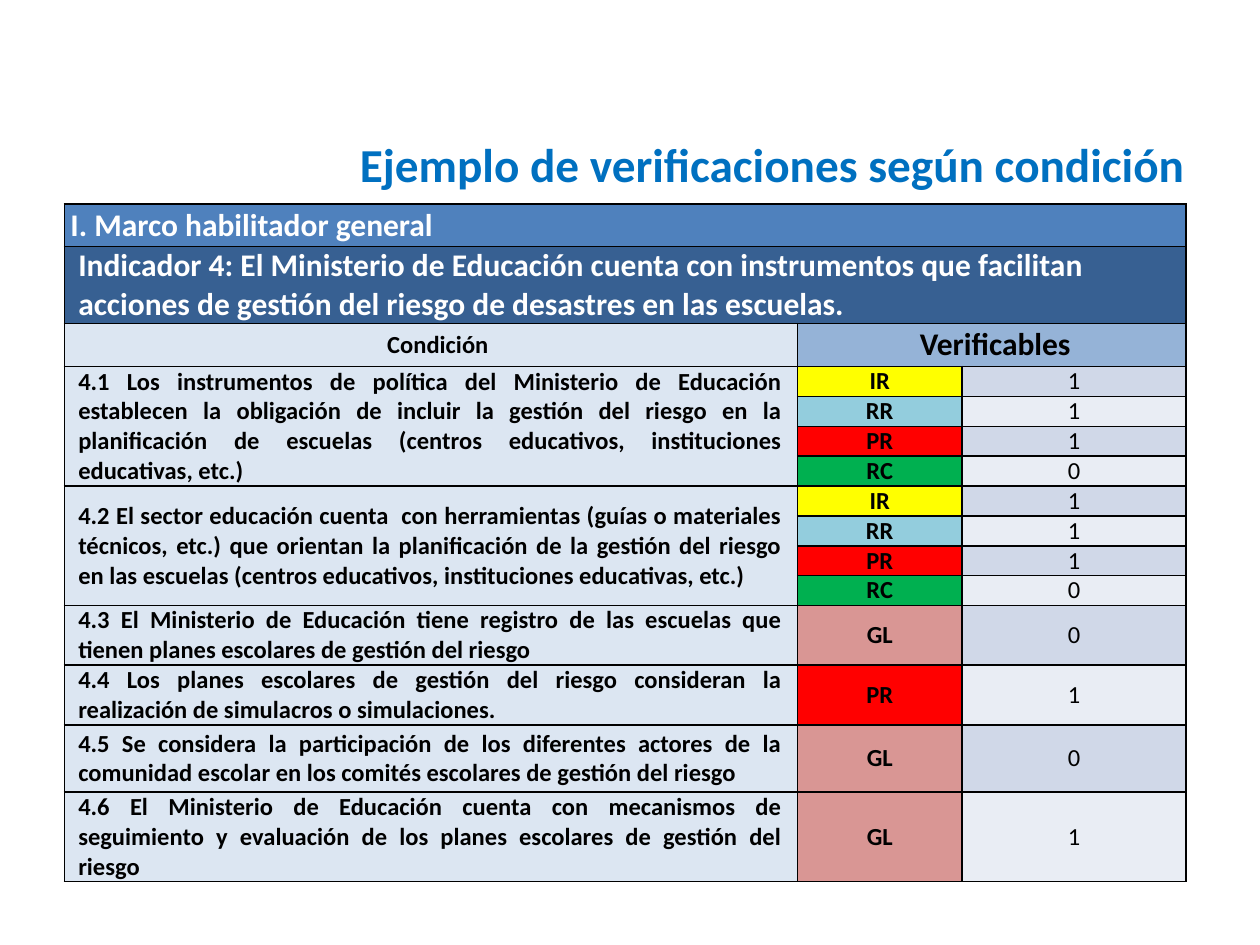
from pptx import Presentation
from pptx.dml.color import RGBColor
from pptx.enum.text import MSO_ANCHOR as Anchor, PP_ALIGN as Align
from pptx.oxml import parse_xml
from pptx.oxml.ns import nsdecls
from pptx.util import Pt


def style(par, color, **font):
    par.font.color.rgb = RGBColor.from_string(color)
    for key, val in {"name": "Calibri", **font}.items():
        setattr(par.font, key, val)


def put(row, col, text, back, color="000000", size=14, bold=True,
        align=Align.CENTER, left=0, right=0):
    """Fill one table cell and draw its borders; left and right indent the text."""
    cell = table.cell(row, col)
    for side in "LRTB":
        cell._tc.get_or_add_tcPr().append(parse_xml(
            f'<a:ln{side} {nsdecls("a")} w="{Pt(1)}"><a:solidFill>'
            f'<a:srgbClr val="000000"/></a:solidFill></a:ln{side}>'))
    form = {"margin_left": Pt(left), "margin_right": Pt(right), "margin_top": 0,
            "margin_bottom": 0, "vertical_anchor": Anchor.MIDDLE}
    for key, val in form.items():
        setattr(cell, key, val)
    cell.fill.solid()
    cell.fill.fore_color.rgb = RGBColor.from_string(back)
    cell.text = text
    par = cell.text_frame.paragraphs[0]
    par.alignment = align
    style(par, color, size=Pt(size), bold=bold)


WHITE, PALE = "FFFFFF", "DCE6F2"
BANDS = ["E9EDF4", "D0D8E8"]
TAGS = {"IR": "FFFF00", "RR": "93CDDD", "PR": "FF0000", "RC": "00B050", "GL": "D99694"}
FOUR = [("IR", 1), ("RR", 1), ("PR", 1), ("RC", 0)]
ITEMS = [
    ("4.1 Los instrumentos de política del Ministerio de Educación establecen la "
     "obligación de incluir la gestión del riesgo en la planificación de escuelas "
     "(centros educativos, instituciones educativas, etc.)", FOUR),
    ("4.2 El sector educación cuenta  con herramientas (guías o materiales técnicos, "
     "etc.) que orientan la planificación de la gestión del riesgo en las escuelas "
     "(centros educativos, instituciones educativas, etc.)", FOUR),
    ("4.3 El Ministerio de Educación tiene registro de las escuelas que tienen "
     "planes escolares de gestión del riesgo", [("GL", 0)]),
    ("4.4 Los planes escolares de gestión del riesgo consideran la realización de "
     "simulacros o simulaciones.", [("PR", 1)]),
    ("4.5 Se considera la participación de los diferentes actores de la comunidad "
     "escolar en los comités escolares de gestión del riesgo", [("GL", 0)]),
    ("4.6 El Ministerio de Educación cuenta con mecanismos de seguimiento y "
     "evaluación de los planes escolares de gestión del riesgo", [("GL", 1)]),
]
WIDTHS = [419, 94, 128]
HEIGHTS = [24.5, 44, 24.5] + [17] * 8 + [34, 34, 38.5, 51]

deck = Presentation()
deck.slide_width, deck.slide_height = Pt(720), Pt(540)
slide = deck.slides.add_slide(deck.slide_layouts[5])

title = slide.shapes.title
title.left, title.top, title.width, title.height = Pt(150.5), Pt(66), Pt(533.5), Pt(55.5)
title.text_frame.text = "Ejemplo de verificaciones según condición"
title.text_frame.vertical_anchor = Anchor.MIDDLE
head = title.text_frame.paragraphs[0]
head.alignment = Align.RIGHT
style(head, "0070C0", size=Pt(27), bold=True)

table = slide.shapes.add_table(len(HEIGHTS), len(WIDTHS), Pt(36.75), Pt(116.5),
                               Pt(sum(WIDTHS)), Pt(sum(HEIGHTS))).table
table.first_row = table.horz_banding = False
for col, width in zip(table.columns, WIDTHS):
    col.width = Pt(width)
for row, height in zip(table.rows, HEIGHTS):
    row.height = Pt(height)

# Headings: the blank cells under each span carry the same fill and borders
for col in range(3):
    put(0, col, "", "4F81BD")
    put(1, col, "", "376092")
put(2, 2, "", "95B3D7")
put(0, 0, "I. Marco habilitador general", "4F81BD", WHITE, 18, align=Align.JUSTIFY, left=3.5)
put(1, 0, "Indicador 4: El Ministerio de Educación cuenta con instrumentos que facilitan "
    "acciones de gestión del riesgo de desastres en las escuelas.",
    "376092", WHITE, 18, align=Align.LEFT, left=8)
put(2, 0, "Condición", PALE, left=8)
put(2, 1, " Verificables", "95B3D7", size=18)
for row, start in [(0, 0), (1, 0), (2, 1)]:
    table.cell(row, start).merge(table.cell(row, 2))

# Conditions with their checks
row = 3
for text, checks in ITEMS:
    first = row
    for tag, value in checks:
        put(row, 0, text if row == first else "", PALE, align=Align.JUSTIFY, left=8, right=9)
        put(row, 1, tag, TAGS[tag])
        put(row, 2, str(value), BANDS[row % 2], bold=False)
        row += 1
    if len(checks) > 1:
        table.cell(first, 0).merge(table.cell(row - 1, 0))

deck.save("out.pptx")
